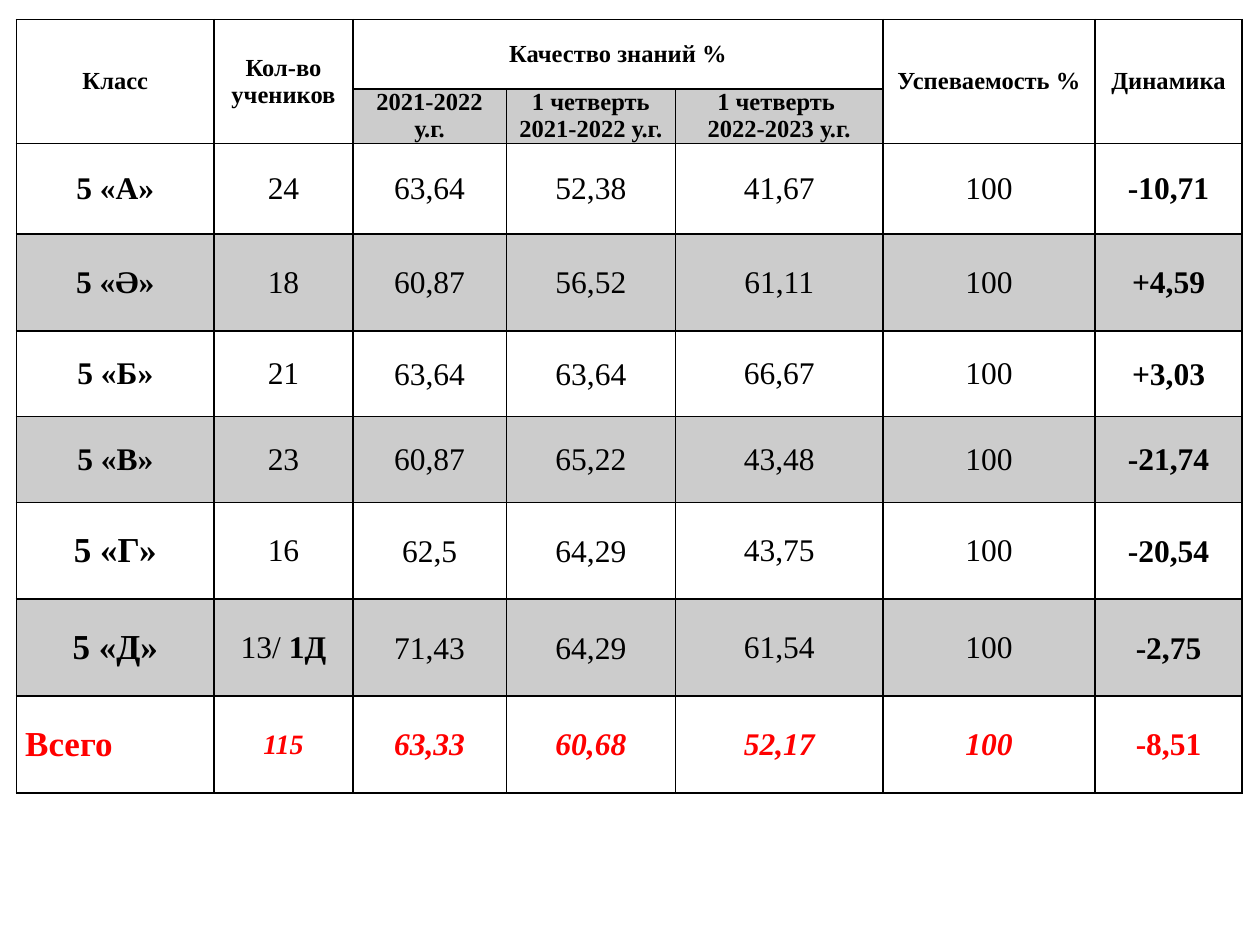
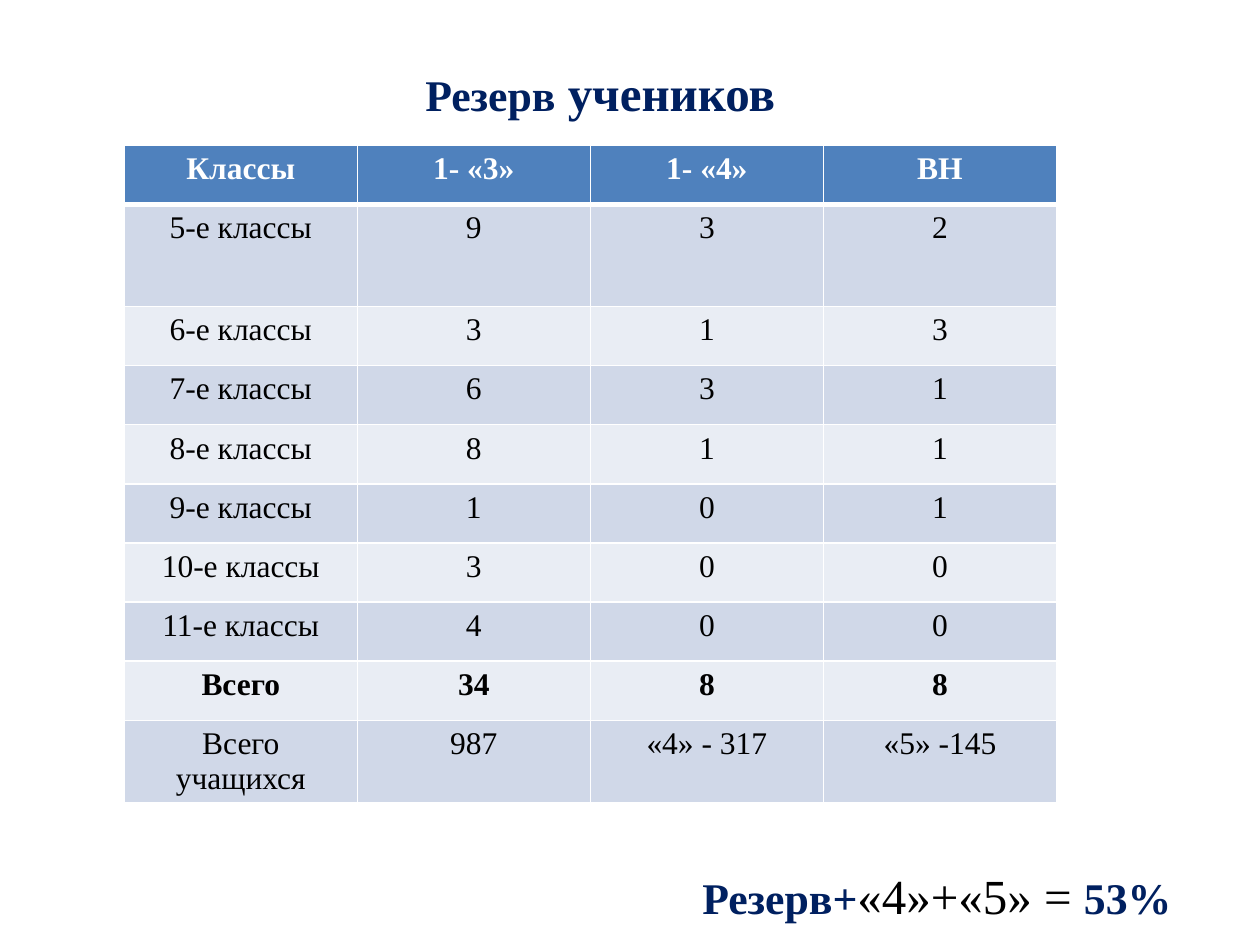
from dataclasses import dataclass
from typing import NamedTuple

from lxml.etree import SubElement
from pptx import Presentation
from pptx.dml.color import RGBColor
from pptx.enum.text import MSO_ANCHOR as Anchor, MSO_AUTO_SIZE as AutoSize, PP_ALIGN as Align
from pptx.oxml.ns import qn
from pptx.util import Pt

FONT = "Times New Roman"
BLACK = RGBColor(0x00, 0x00, 0x00)
WHITE = RGBColor(0xFF, 0xFF, 0xFF)
RED = RGBColor(0xFF, 0x00, 0x00)
NAVY = RGBColor(0x00, 0x20, 0x60)
GREY = RGBColor(0xCC, 0xCC, 0xCC)
BLUE = RGBColor(0x4F, 0x81, 0xBD)
BAND_DARK = RGBColor(0xD0, 0xD8, 0xE8)
BAND_LIGHT = RGBColor(0xE9, 0xED, 0xF4)


class Span(NamedTuple):
    """A stretch of text with one look."""
    text: str
    size: float = 18
    bold: bool = False
    color: RGBColor = BLACK
    italic: bool = False


class Box(NamedTuple):
    """A place on the slide in points."""
    left: float
    top: float
    width: float
    height: float


@dataclass
class CellStyle:
    """Fill, borders (left, right, top, bottom), insets and alignment of a cell."""
    fill: RGBColor | None
    line: RGBColor
    widths: tuple[float, ...] = (1, 1, 1, 1)
    insets: tuple[float, ...] = (7.2, 3.6, 7.2, 3.6)
    anchor: Anchor = Anchor.TOP
    align: Align = Align.CENTER


HEADINGS = ["Класс", "Кол-во учеников", "Качество знаний %", "", "", "Успеваемость %", "Динамика"]
PERIODS = ["", "", "2021-2022 у.г.", "1 четверть\n2021-2022 у.г.", "1 четверть \n2022-2023 у.г.", "", ""]
QUALITY = [
    ["5 «А»", "24", "63,64", "52,38", "41,67", "100", "-10,71"],
    ["5 «Ә»", "18", "60,87", "56,52", "61,11", "100", "+4,59"],
    ["5 «Б»", "21", "63,64", "63,64", "66,67", "100", "+3,03"],
    ["5 «В»", "23", "60,87", "65,22", "43,48", "100", "-21,74"],
    ["5 «Г»", "16", "62,5", "64,29", "43,75", "100", "-20,54"],
    ["5 «Д»", "13/ ", "71,43", "64,29", "61,54", "100", "-2,75"],
    ["Всего", "115", "63,33", "60,68", "52,17", "100", "-8,51"],
]
QUALITY_COLS = [113, 79.2, 87.8, 96.5, 118.8, 121, 84.2]
QUALITY_ROWS = [39.6, 31.1, 51.8, 55.4, 49, 49, 55.4, 55.4, 55.4]
LARGE_CLASSES = ("5 «Г»", "5 «Д»", "Всего")
TIGHT_COLS = (2, 3, 6)

RESERVE = [
    ["Классы", "1- «3»", "1- «4»", "ВН"],
    ["5-е классы", "9", "3", "2"],
    ["6-е классы", "3", "1", "3"],
    ["7-е классы", "6", "3", "1"],
    ["8-е классы", "8", "1", "1"],
    ["9-е классы", "1", "0", "1"],
    ["10-е классы", "3", "0", "0"],
    ["11-е классы", "4", "0", "0"],
    ["Всего", "34", "8", "8"],
    ["Всего учащихся", "987", "«4» - 317", "«5» -145"],
]
RESERVE_ROWS = [33.8, 58.3] + [33.8] * 7 + [47]


def write(tf, spans: list[Span], align: Align = Align.CENTER) -> None:
    """Fill a text frame with spans and format their runs."""
    done = 0
    for i, span in enumerate(spans):
        if i == 0:
            tf.text = span.text
        else:
            tf.paragraphs[-1].add_run().text = span.text
        runs = [r for p in tf.paragraphs for r in p.runs]
        for r in runs[done:]:
            r.font.name = FONT
            r.font.size = Pt(span.size)
            r.font.bold = span.bold
            r.font.italic = span.italic
            r.font.color.rgb = span.color
        done = len(runs)
    for p in tf.paragraphs:
        p.alignment = align


def set_borders(cell, color: RGBColor, widths: tuple[float, ...]) -> None:
    """Draw the four borders of a cell."""
    props = cell._tc.get_or_add_tcPr()
    for i, (side, width) in enumerate(zip("LRTB", widths)):
        ln = SubElement(props, qn(f"a:ln{side}"), w=str(Pt(width)))
        fill = SubElement(ln, qn("a:solidFill"))
        SubElement(fill, qn("a:srgbClr"), val=str(color))
        props.insert(i, ln)


def style_cell(cell, style: CellStyle) -> None:
    """Apply fill, insets, anchor and borders to a cell."""
    if style.fill is None:
        cell.fill.background()
    else:
        cell.fill.solid()
        cell.fill.fore_color.rgb = style.fill
    cell.margin_left, cell.margin_top, cell.margin_right, cell.margin_bottom = map(Pt, style.insets)
    cell.vertical_anchor = style.anchor
    set_borders(cell, style.line, style.widths)


def add_grid(slide, left: float, top: float, cols: list[float], rows: list[float]):
    """Add a table with the given column widths and row heights."""
    table = slide.shapes.add_table(len(rows), len(cols), Pt(left), Pt(top),
                                   Pt(sum(cols)), Pt(sum(rows))).table
    table.first_row = table.horz_banding = False
    for col, width in zip(table.columns, cols):
        col.width = Pt(width)
    for row, height in zip(table.rows, rows):
        row.height = Pt(height)
    return table


def place_text(sp, box: Box, spans: list[Span]) -> None:
    """Move a text shape and write one centred line in it."""
    sp.left, sp.top, sp.width, sp.height = map(Pt, box)
    tf = sp.text_frame
    tf.word_wrap = True
    tf.auto_size = AutoSize.NONE
    tf.vertical_anchor = Anchor.BOTTOM
    write(tf, spans)


def quality_spans(r: int, c: int, text: str) -> list[Span]:
    """Give the look of a cell in the quality table."""
    if r < 2:
        return [Span(text, 14, True)]
    total = r == len(QUALITY_ROWS) - 1
    size = 20 if text in LARGE_CLASSES else 16 if total and c == 1 else 18
    spans = [Span(text, size, total or c in (0, 6), RED if total else BLACK, total and 0 < c < 6)]
    if text == "13/ ":
        spans.append(Span("1Д", bold=True))
    return spans


def quality_style(r: int, c: int) -> CellStyle:
    """Give the fill and insets of a cell in the quality table."""
    total = r == len(QUALITY_ROWS) - 1
    shaded = r % 2 == 1 and (r > 1 or 2 <= c <= 4)
    tight = r > 1 and c in TIGHT_COLS and not (total and c == 6)
    return CellStyle(GREY if shaded else None, BLACK,
                     insets=(0.7, 0.7, 0.7, 0) if tight else (5, 0, 5, 0),
                     anchor=Anchor.MIDDLE,
                     align=Align.LEFT if total and c == 0 else Align.CENTER)


def build_quality(prs) -> None:
    """Build the slide on quality of knowledge by class."""
    slide = prs.slides.add_slide(prs.slide_layouts[6])
    table = add_grid(slide, 9.4, 11.2, QUALITY_COLS, QUALITY_ROWS)
    for c in (0, 1, 5, 6):
        table.cell(0, c).merge(table.cell(1, c))
    table.cell(0, 2).merge(table.cell(0, 4))
    for r, row in enumerate([HEADINGS, PERIODS] + QUALITY):
        for c, text in enumerate(row):
            cell, style = table.cell(r, c), quality_style(r, c)
            style_cell(cell, style)
            if text:
                write(cell.text_frame, quality_spans(r, c, text), style.align)


def build_reserve(prs) -> None:
    """Build the slide on the reserve of pupils."""
    slide = prs.slides.add_slide(prs.slide_layouts[5])
    table = add_grid(slide, 71, 83, [133.2] * 4, RESERVE_ROWS)
    for r, row in enumerate(RESERVE):
        fill = BLUE if r == 0 else BAND_DARK if r % 2 else BAND_LIGHT
        widths = (1, 1, 3 if r == 1 else 1, 3 if r == 0 else 1)
        for c, text in enumerate(row):
            cell = table.cell(r, c)
            style_cell(cell, CellStyle(fill, WHITE, widths))
            write(cell.text_frame, [Span(text, bold=r in (0, 8), color=BLACK if r else WHITE)])
    place_text(slide.shapes.title, Box(190, 31.7, 306, 41),
               [Span("Резерв", 25, True, NAVY), Span(" учеников", 28, True, NAVY)])
    place_text(slide.shapes.add_textbox(0, 0, 0, 0), Box(382.3, 491, 306, 41),
               [Span("Резерв+", 25, True, NAVY), Span("«4»+«5» = ", 28), Span("53%", 25, True, NAVY)])


def main() -> None:
    """Build the deck and save it."""
    prs = Presentation()
    prs.slide_width, prs.slide_height = Pt(720), Pt(540)
    build_quality(prs)
    build_reserve(prs)
    prs.save("out.pptx")


if __name__ == "__main__":
    main()
